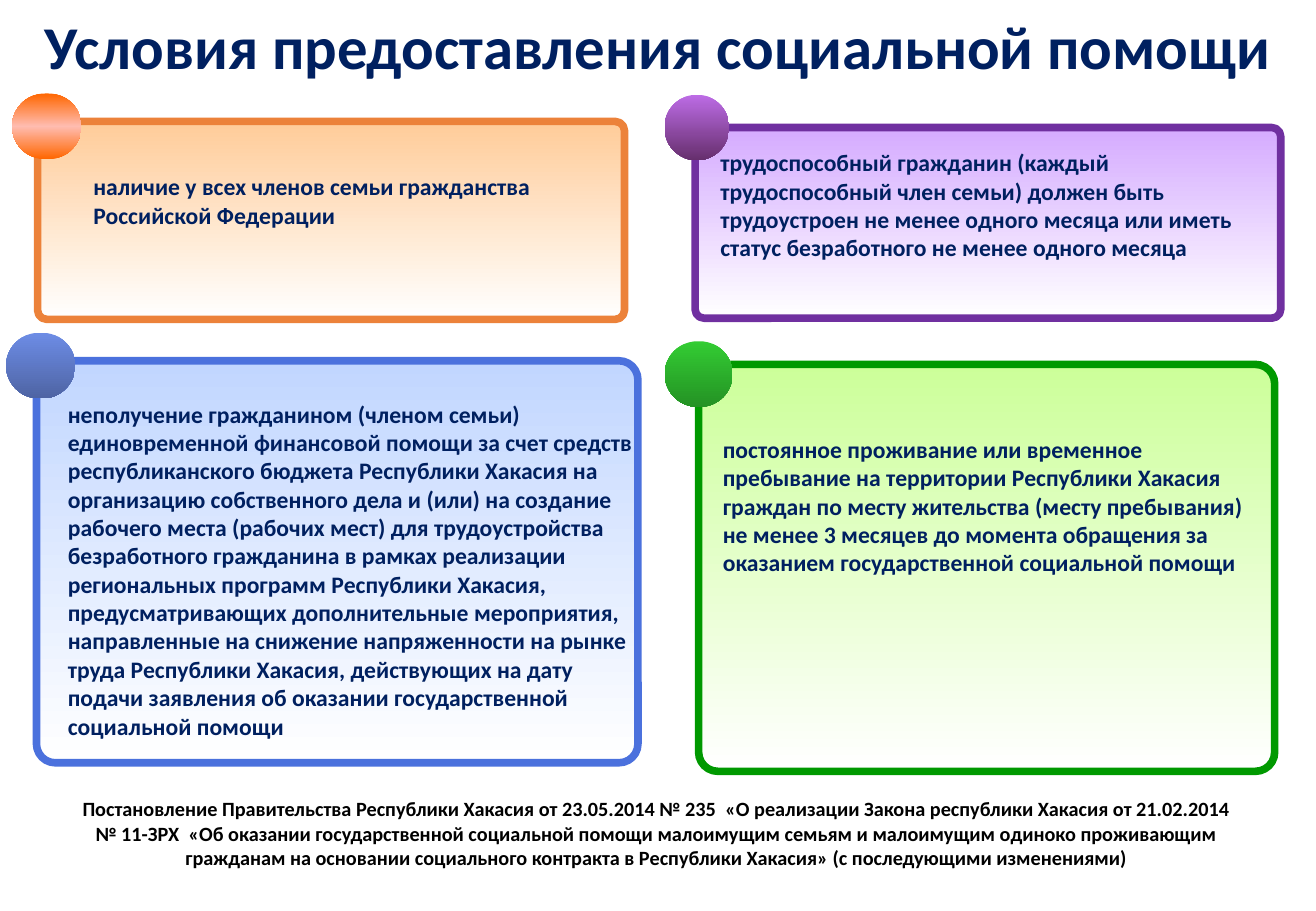
from copy import deepcopy

from pptx import Presentation
from pptx.dml.color import RGBColor
from pptx.enum.shapes import MSO_SHAPE as SHAPE
from pptx.enum.text import MSO_ANCHOR as ANCHOR, MSO_AUTO_SIZE as AUTO_SIZE, PP_ALIGN as ALIGN
from pptx.oxml.ns import qn
from pptx.util import Inches, Pt

NAVY = RGBColor(0x00, 0x20, 0x60)
BLACK = RGBColor(0x00, 0x00, 0x00)
WHITE = RGBColor(0xFF, 0xFF, 0xFF)
GREEN = RGBColor(0x00, 0x99, 0x00)
GREEN_PALE = RGBColor(0xCC, 0xFF, 0x99)
GREEN_BALL = [RGBColor(0x33, 0xCC, 0x33), RGBColor(0x24, 0x92, 0x24)]
BLUE = RGBColor(0x4B, 0x71, 0xDD)
BLUE_PALE = RGBColor(0xC1, 0xD6, 0xFF)
BLUE_BALL = [RGBColor(0x6D, 0x8C, 0xE5), RGBColor(0x4E, 0x64, 0xA4)]
ORANGE = RGBColor(0xEC, 0x82, 0x3A)
ORANGE_PALE = RGBColor(0xFF, 0xCC, 0x99)
ORANGE_EDGE = RGBColor(0xFF, 0x66, 0x00)
ORANGE_BALL = [ORANGE_EDGE, RGBColor(0xFF, 0xBC, 0xB0), ORANGE_EDGE]
PURPLE = RGBColor(0x70, 0x30, 0xA0)
PURPLE_PALE = RGBColor(0xD5, 0xAB, 0xFF)
PURPLE_BALL = [RGBColor(0xBD, 0x6C, 0xE6), RGBColor(0x66, 0x2F, 0x6D)]

# panel box, ball box, text box, border, pale fill, ball colours, condition
CONDITIONS = [
    ((5.75, 3, 4.74, 3.35), (5.47, 2.81, 0.56, 0.54), (5.85, 3.53, 4.55, 1.28),
     GREEN, GREEN_PALE, GREEN_BALL,
     "постоянное проживание или временное пребывание на территории Республики Хакасия "
     "граждан по месту жительства (месту пребывания) не менее 3 месяцев до момента "
     "обращения за оказанием государственной социальной помощи"),
    ((0.3, 2.97, 4.95, 3.31), (0.05, 2.74, 0.57, 0.54), (0.46, 3.24, 4.95, 2.93),
     BLUE, BLUE_PALE, BLUE_BALL,
     "неполучение гражданином (членом семьи) единовременной финансовой помощи за счет "
     "средств республиканского бюджета Республики Хакасия на организацию собственного "
     "дела и (или) на создание рабочего места (рабочих мест) для трудоустройства "
     "безработного гражданина в рамках реализации региональных программ Республики "
     "Хакасия, предусматривающих дополнительные мероприятия, направленные на снижение "
     "напряженности на рынке труда Республики Хакасия, действующих на дату подачи "
     "заявления об оказании государственной социальной помощи"),
    ((0.31, 1, 4.83, 1.63), (0.1, 0.77, 0.57, 0.54), (0.67, 1.37, 4.4, 0.57),
     ORANGE, ORANGE_PALE, ORANGE_BALL,
     "наличие у всех членов семьи гражданства Российской Федерации"),
    ((5.72, 1.05, 4.82, 1.57), (5.47, 0.78, 0.53, 0.54), (5.83, 1.17, 4.64, 1.04),
     PURPLE, PURPLE_PALE, PURPLE_BALL,
     "трудоспособный гражданин (каждый трудоспособный член семьи) должен быть "
     "трудоустроен не менее одного месяца или иметь статус безработного не менее "
     "одного месяца"),
]
DECREE = [
    "Постановление Правительства Республики Хакасия от 23.05.2014 № 235  "
    "«О реализации Закона республики Хакасия от 21.02.2014",
    "№ 11-ЗРХ  «Об оказании государственной социальной помощи малоимущим семьям "
    "и малоимущим одиноко проживающим",
    "гражданам на основании социального контракта в Республики Хакасия» "
    "(с последующими изменениями)",
]


def add_rounded(box, rounding, colours):
    """Add a rounded shape whose evenly spaced colours run from top to bottom."""
    shape = slide.shapes.add_shape(SHAPE.ROUNDED_RECTANGLE, *map(Inches, box))
    shape.adjustments[0] = rounding
    shape.shadow.inherit = False
    shape.fill.gradient()
    shape.fill.gradient_angle = 270
    stop_list = shape._element.spPr.find(qn("a:gradFill")).find(qn("a:gsLst"))
    for _ in colours[2:]:
        stop_list.append(deepcopy(stop_list[-1]))
    for index, (stop, colour) in enumerate(zip(shape.fill.gradient_stops, colours)):
        stop.position = index / (len(colours) - 1)
        stop.color.rgb = colour
    return shape


def write(frame, lines, size, colour, align):
    frame.word_wrap = True
    frame.auto_size = AUTO_SIZE.NONE
    frame.vertical_anchor = ANCHOR.TOP
    frame.text = "\n".join(lines)
    for paragraph in frame.paragraphs:
        paragraph.alignment = align
        font = paragraph.runs[0].font
        font.name, font.size, font.bold = "Calibri", Pt(size), True
        font.color.rgb = colour


prs = Presentation()
prs.slide_width, prs.slide_height = Inches(10.83), Inches(7.5)
slide = prs.slides.add_slide(prs.slide_layouts[5])

title = slide.shapes.title
title.left, title.top = Inches(0.18), Inches(0.02)
title.width, title.height = Inches(10.47), Inches(0.71)
write(title.text_frame, ["Условия предоставления социальной помощи"], 36, NAVY, ALIGN.CENTER)

for panel_box, ball_box, text_box, border, pale, ball_colours, condition in CONDITIONS:
    panel = add_rounded(panel_box, 0.047, [pale, WHITE])
    panel.line.color.rgb = border
    panel.line.width = Pt(4.5)
    ball = add_rounded(ball_box, 0.5, ball_colours)
    ball.line.fill.background()
    caption = slide.shapes.add_textbox(*map(Inches, text_box))
    write(caption.text_frame, [condition], 14, NAVY, ALIGN.LEFT)

decree = slide.shapes.add_textbox(Inches(0.31), Inches(6.51), Inches(10.19), Inches(0.71))
write(decree.text_frame, DECREE, 12, BLACK, ALIGN.CENTER)

prs.save("out.pptx")
